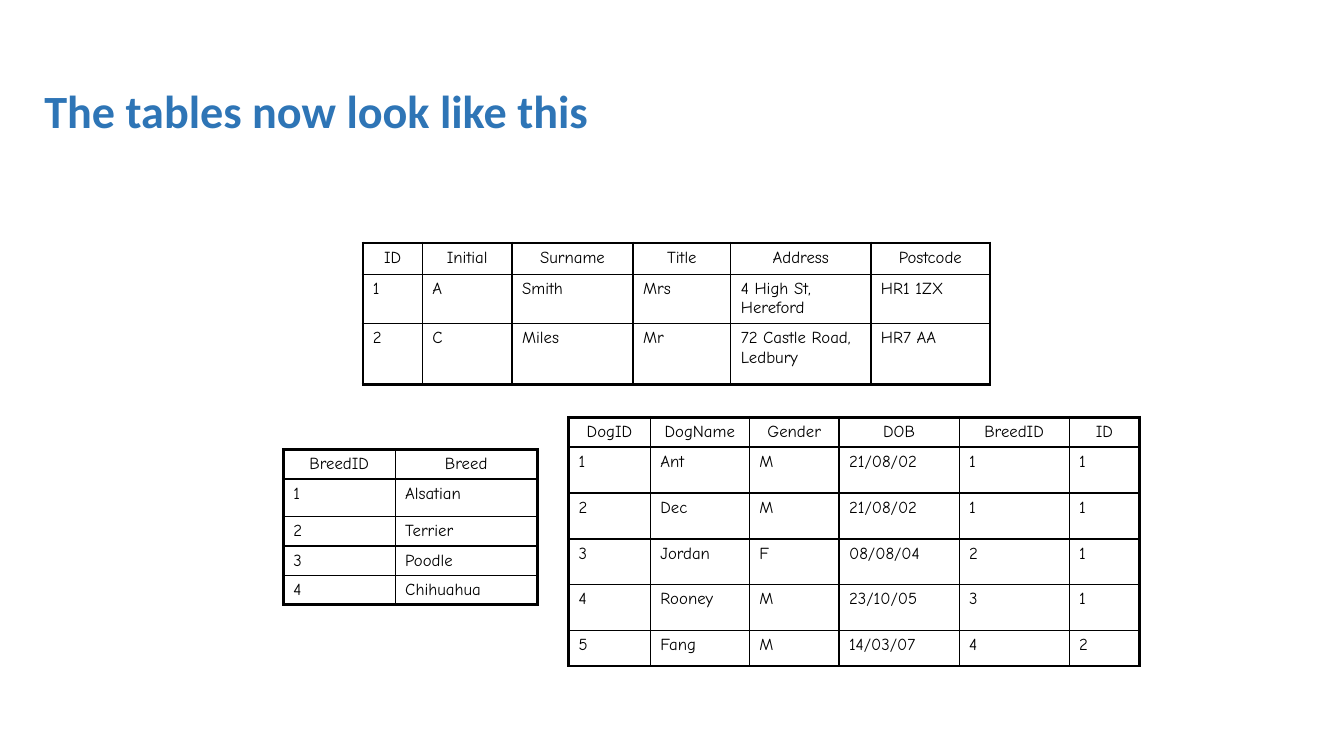
import dataclasses

import lxml.etree
import pptx
import pptx.dml.color
import pptx.enum.text
import pptx.oxml.ns
import pptx.util


@dataclasses.dataclass(frozen=True)
class Theme:
    """Colours, fonts, type sizes and line widths of the deck."""
    title_colour: str = "2E75B6"
    ink: str = "000000"
    title_font: str = "Calibri"
    table_font: str = "Comic Neue"
    title_size: float = 33
    table_size: float = 12
    frame_line: float = 2.25
    grid_line: float = 1


THEME = Theme()
GRID = 100

TITLE_BOX = (2.55, 5.33, 95.12, 19.33)
OWNER_BOX = (27, 32.13, 46.66, 18.7)
DOG_BOX = (42.31, 55.2, 42.5, 32.93)
BREED_BOX = (21.08, 59.47, 18.9, 20.5)

OWNERS = [
    ["ID", "Initial", "Surname", "Title", "Address", "Postcode"],
    ["1", "A", "Smith", "Mrs", "4 High St, Hereford", "HR1 1ZX"],
    ["2", "C", "Miles", "Mr", "72 Castle Road, Ledbury", "HR7 AA"],
]
DOGS = [
    ["DogID", "DogName", "Gender", "DOB", "BreedID", "ID"],
    ["1", "Ant", "M", "21/08/02", "1", "1"],
    ["2", "Dec", "M", "21/08/02", "1", "1"],
    ["3", "Jordan", "F", "08/08/04", "2", "1"],
    ["4", "Rooney", "M", "23/10/05", "3", "1"],
    ["5", "Fang", "M", "14/03/07", "4", "2"],
]
BREEDS = [
    ["BreedID", "Breed"],
    ["1", "Alsatian"],
    ["2", "Terrier"],
    ["3", "Poodle"],
    ["4", "Chihuahua"],
]


def place(deck, box):
    """Turn a box in grid columns and rows into slide lengths."""
    column, row = deck.slide_width / GRID, deck.slide_height / GRID
    return [round(share * unit) for share, unit in zip(box, (column, row) * 2)]


def style_text(para, font, size, colour, bold=False):
    """Format every run of a paragraph."""
    for span in para.runs:
        span.font.name = font
        span.font.size = pptx.util.Pt(size)
        span.font.bold = bold
        span.font.color.rgb = pptx.dml.color.RGBColor.from_string(colour)


def add_title(deck, page, box, text):
    """Fill and place the title placeholder."""
    title = page.shapes.title
    title.left, title.top, title.width, title.height = place(deck, box)
    frame = title.text_frame
    frame.text = text
    frame.auto_size = pptx.enum.text.MSO_AUTO_SIZE.NONE
    frame.vertical_anchor = pptx.enum.text.MSO_ANCHOR.MIDDLE
    para = frame.paragraphs[0]
    para.alignment = pptx.enum.text.PP_ALIGN.LEFT
    para.line_spacing = 0.9
    style_text(para, THEME.title_font, THEME.title_size, THEME.title_colour, True)


def add_borders(cell, outer_sides):
    """Draw the four cell edges, heavier on the outside of the table."""
    properties = cell._tc.get_or_add_tcPr()
    for side in "LRTB":
        width = THEME.frame_line if side in outer_sides else THEME.grid_line
        edge = lxml.etree.SubElement(
            properties, pptx.oxml.ns.qn("a:ln" + side), w=str(pptx.util.Pt(width)))
        fill = lxml.etree.SubElement(edge, pptx.oxml.ns.qn("a:solidFill"))
        lxml.etree.SubElement(fill, pptx.oxml.ns.qn("a:srgbClr"), val=THEME.ink)


def fill_cell(cell, text, is_header, outer_sides):
    """Write one cell with its borders and clear fill."""
    add_borders(cell, outer_sides)
    cell.fill.background()
    cell.text_frame.text = text
    para = cell.text_frame.paragraphs[0]
    align = pptx.enum.text.PP_ALIGN
    para.alignment = align.CENTER if is_header else align.LEFT
    style_text(para, THEME.table_font, THEME.table_size, THEME.ink)


def add_data_table(deck, page, box, records, column_shares, row_shares):
    """Build a framed table whose columns and rows share out the box."""
    left, top, width, height = place(deck, box)
    last_row, last_column = len(records) - 1, len(records[0]) - 1
    table = page.shapes.add_table(
        last_row + 1, last_column + 1, left, top, width, height).table
    table.first_row = table.horz_banding = False
    for column, share in zip(table.columns, column_shares):
        column.width = round(width * share / sum(column_shares))
    for row, share in zip(table.rows, row_shares):
        row.height = round(height * share / sum(row_shares))
    for r, record in enumerate(records):
        for c, text in enumerate(record):
            edges = {"L": c == 0, "R": c == last_column, "T": r == 0, "B": r == last_row}
            outer_sides = [side for side, is_outer in edges.items() if is_outer]
            fill_cell(table.cell(r, c), text, r == 0, outer_sides)


def build_tables_page(deck):
    """Add the page with its title and three related tables."""
    page = deck.slides.add_slide(deck.slide_layouts.get_by_name("Title Only"))
    add_title(deck, page, TITLE_BOX, "The tables now look like this")
    add_data_table(deck, page, OWNER_BOX, OWNERS,
                   [59, 89, 120, 97, 139, 118], [31, 49, 60])
    add_data_table(deck, page, DOG_BOX, DOGS,
                   [81, 98, 89, 119, 109, 70], [29.5] + [45.5] * 4 + [35])
    add_data_table(deck, page, BREED_BOX, BREEDS,
                   [111, 141], [29, 37, 29, 29, 29])


def main():
    """Create and save the deck."""
    deck = pptx.Presentation()
    deck.slide_width = pptx.util.Inches(13.33)
    deck.slide_height = pptx.util.Inches(7.5)
    build_tables_page(deck)
    deck.save("out.pptx")


if __name__ == "__main__":
    main()
